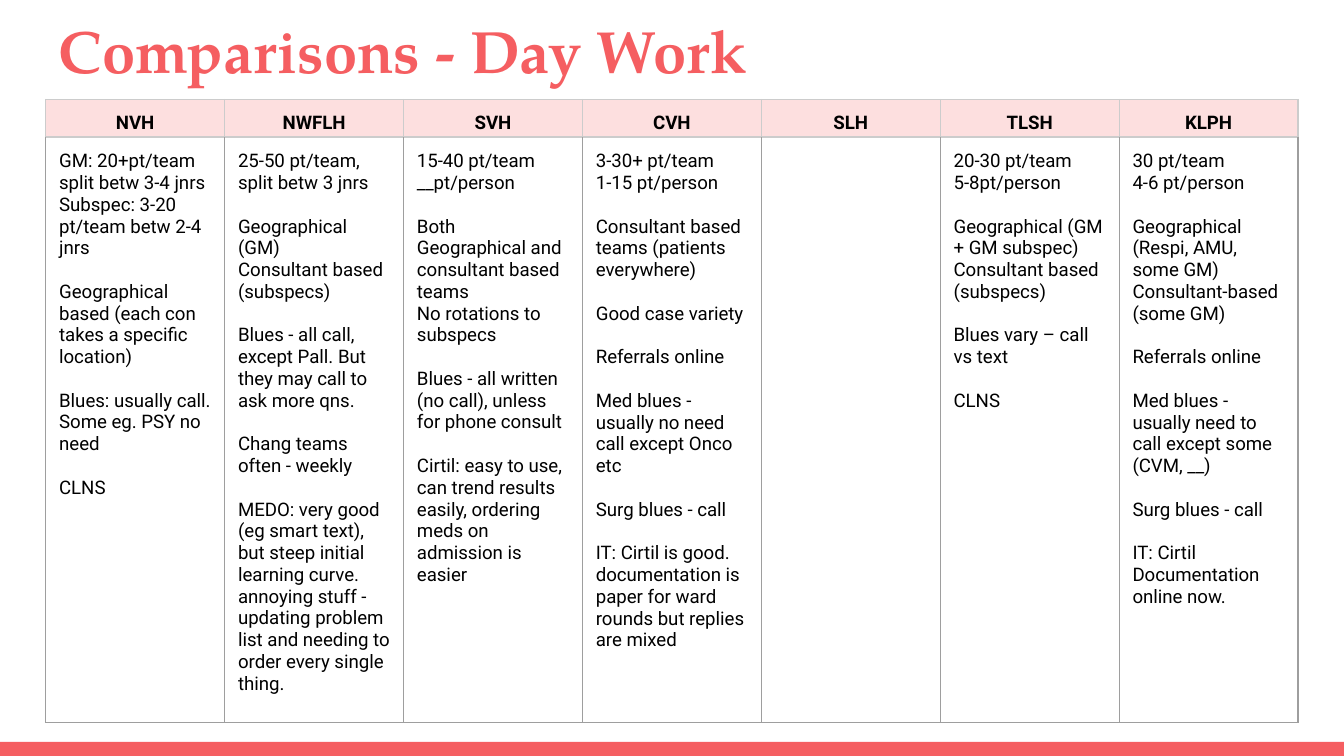
from lxml.etree import SubElement
from pptx import Presentation
from pptx.dml.color import RGBColor
from pptx.enum.shapes import MSO_SHAPE
from pptx.enum.text import MSO_ANCHOR, PP_ALIGN
from pptx.oxml.ns import qn
from pptx.util import Inches, Pt

CORAL, PINK, BLACK = "F55E61", "FDDFDF", "000000"
LIGHT, GREY = "CCCCCC", "9E9E9E"
GAP = Pt(11.7)
WIDE = Inches(10)
ROWS = (0.28, 4.3)

TEAMS = {
    "NVH": [
        ["GM: 20+pt/team split betw 3-4 jnrs",
         "Subspec: 3-20 pt/team betw 2-4 jnrs"],
        ["Geographical based (each con takes a specific location)"],
        ["Blues: usually call. Some eg. PSY no need"],
        ["CLNS"],
    ],
    "NWFLH": [
        ["25-50 pt/team, split betw 3 jnrs"],
        ["Geographical (GM)", "Consultant based (subspecs)"],
        ["Blues - all call, except Pall. But they may call to ask more qns."],
        ["Chang teams often - weekly"],
        ["MEDO: very good (eg smart text), but steep initial learning curve. "
         "annoying stuff - updating problem list and needing to order every "
         "single thing."],
    ],
    "SVH": [
        ["15-40 pt/team", "__pt/person"],
        ["Both Geographical and consultant based teams",
         "No rotations to subspecs"],
        ["Blues - all written (no call), unless for phone consult"],
        ["Cirtil: easy to use, can trend results easily, ordering meds on "
         "admission is easier"],
    ],
    "CVH": [
        ["3-30+ pt/team", "1-15 pt/person"],
        ["Consultant based teams (patients everywhere)"],
        ["Good case variety"],
        ["Referrals online"],
        ["Med blues - usually no need call except Onco etc"],
        ["Surg blues - call"],
        ["IT: Cirtil is good. documentation is paper for ward rounds but "
         "replies are mixed"],
    ],
    "SLH": [],
    "TLSH": [
        ["20-30 pt/team", "5-8pt/person"],
        ["Geographical (GM + GM subspec)", "Consultant based (subspecs)"],
        ["Blues vary – call vs text"],
        ["CLNS"],
    ],
    "KLPH": [
        ["30 pt/team", "4-6 pt/person"],
        ["Geographical (Respi, AMU, some GM)", "Consultant-based (some GM)"],
        ["Referrals online"],
        ["Med blues - usually need to call except some (CVM, __)"],
        ["Surg blues - call"],
        ["IT: Cirtil", "Documentation online now."],
    ],
}


def color(code):
    return RGBColor.from_string(code)


def apply(item, form):
    for name, value in form.items():
        setattr(item, name, value)


def pad(item, side, top):
    apply(item, {"margin_left": Inches(side), "margin_right": Inches(side),
                 "margin_top": Inches(top), "margin_bottom": Inches(top)})


def write(para, text, face, size, code, bold=False):
    run = para.add_run()
    run.text = text
    apply(run.font, {"name": face, "size": Pt(size), "bold": bold})
    run.font.color.rgb = color(code)


def add_bar(slide):
    bar = slide.shapes.add_shape(MSO_SHAPE.RECTANGLE, Inches(0), Inches(5.52),
                                 WIDE, Inches(0.11))
    bar.shadow.inherit = False
    bar.fill.solid()
    bar.fill.fore_color.rgb = color(CORAL)
    bar.line.fill.background()


def add_title(slide, text):
    box = slide.shapes.add_textbox(Inches(0.34), Inches(0),
                                   Inches(9.32), Inches(0.52))
    frame = box.text_frame
    apply(frame, {"word_wrap": True, "vertical_anchor": MSO_ANCHOR.TOP})
    pad(frame, 0.1, 0.1)
    write(frame.paragraphs[0], text, "TeX Gyre Pagella", 32, CORAL, True)


def edge(cell, codes):
    props = cell._tc.get_or_add_tcPr()
    for side, code in zip("LRTB", codes):
        line = SubElement(props, qn(f"a:ln{side}"), w=str(Pt(0.75)))
        fill = SubElement(line, qn("a:solidFill"))
        SubElement(fill, qn("a:srgbClr"), val=code)


def fill_head(cell, name):
    edge(cell, [LIGHT] * 4)
    cell.fill.solid()
    cell.fill.fore_color.rgb = color(PINK)
    cell.vertical_anchor = MSO_ANCHOR.BOTTOM
    pad(cell, 0.03, 0.02)
    para = cell.text_frame.paragraphs[0]
    apply(para, {"alignment": PP_ALIGN.CENTER, "line_spacing": 1.15})
    write(para, name, "Roboto", 10, BLACK, True)


def fill_body(cell, groups):
    edge(cell, [GREY, GREY, LIGHT, GREY])
    cell.fill.background()
    pad(cell, 0.1, 0.1)
    frame = cell.text_frame
    para = frame.paragraphs[0]
    for i, group in enumerate(groups):
        for j, text in enumerate(group):
            if i or j:
                para = frame.add_paragraph()
            if i and not j:
                para.space_before = GAP
            write(para, text, "Roboto", 10, BLACK)


def add_grid(slide, teams):
    frame = slide.shapes.add_table(len(ROWS), len(teams), Inches(0.34),
                                   Inches(0.74), Inches(9.32),
                                   Inches(sum(ROWS)))
    table = frame.table
    apply(table, {"first_row": False, "horz_banding": False})
    for row, tall in zip(table.rows, ROWS):
        row.height = Inches(tall)
    for col, (name, groups) in enumerate(teams.items()):
        table.columns[col].width = Inches(9.32 / len(teams))
        fill_head(table.cell(0, col), name)
        fill_body(table.cell(1, col), groups)


def main():
    deck = Presentation()
    apply(deck, {"slide_width": WIDE, "slide_height": WIDE * 9 // 16})
    slide = deck.slides.add_slide(deck.slide_layouts[6])
    add_bar(slide)
    add_title(slide, "Comparisons - Day Work")
    add_grid(slide, TEAMS)
    deck.save("out.pptx")


if __name__ == "__main__":
    main()
